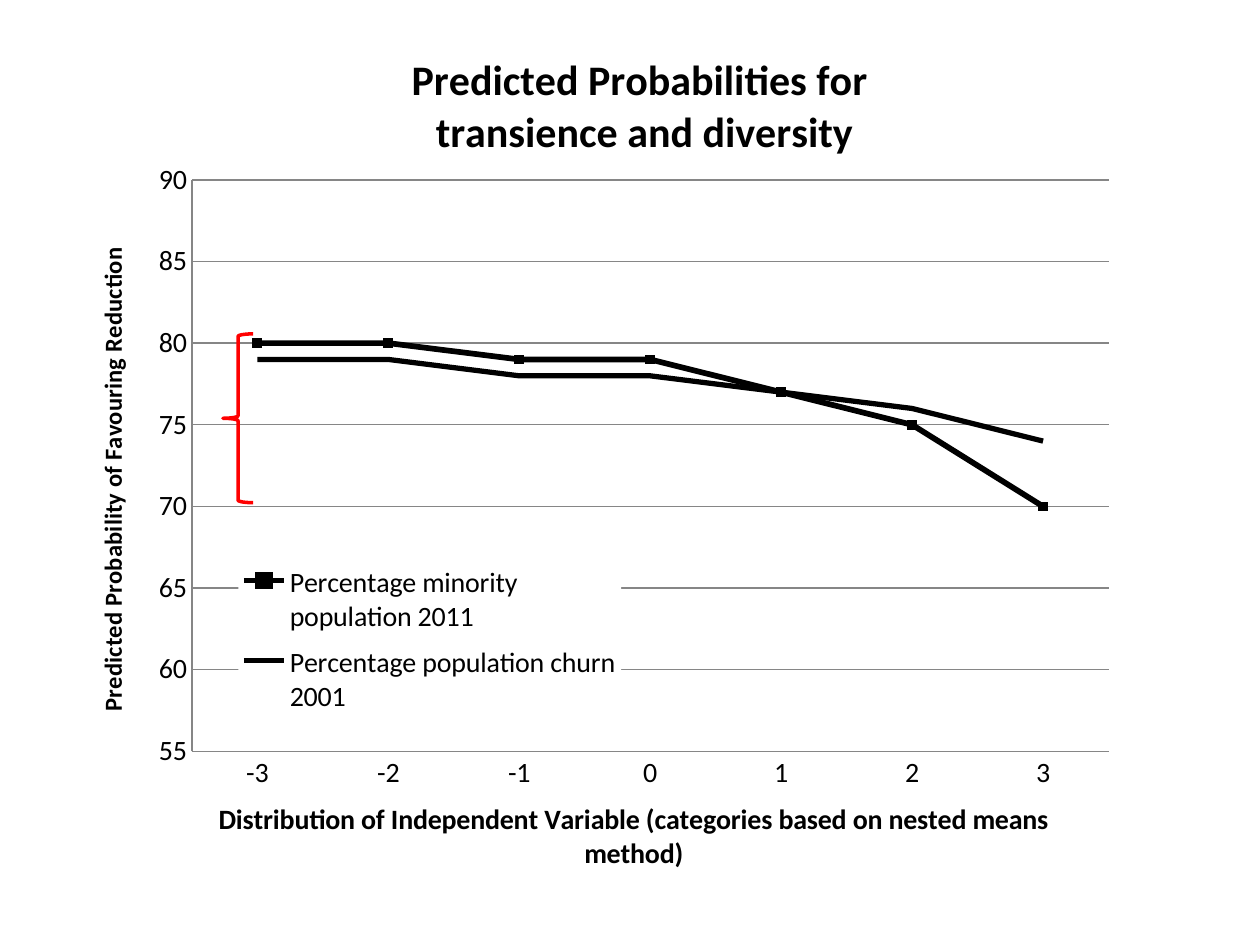
"""Build a slide with a line chart of predicted probabilities and a red brace."""
from lxml import etree
from pptx import Presentation
from pptx.chart.data import CategoryChartData
from pptx.dml.color import RGBColor
from pptx.enum.chart import XL_CHART_TYPE as ChartType, XL_LEGEND_POSITION as LegendPosition
from pptx.enum.chart import XL_MARKER_STYLE as Marker, XL_TICK_MARK as Tick
from pptx.enum.shapes import MSO_SHAPE as Shape
from pptx.oxml import parse_xml
from pptx.oxml.ns import nsdecls, qn
from pptx.util import Inches, Pt


def color(value):
    return RGBColor.from_string(value)


def manual_layout(inner, **bounds):
    layout = etree.Element(qn("c:layout"))
    manual = etree.SubElement(layout, qn("c:manualLayout"))
    values = {"layoutTarget": "inner"} if inner else {}
    values.update(xMode="edge", yMode="edge", **bounds)
    for name, value in values.items():
        etree.SubElement(manual, qn(f"c:{name}")).set("val", str(value))
    return layout


deck = Presentation()
deck.slide_width, deck.slide_height = Inches(10), Inches(7.5)
slide = deck.slides.add_slide(deck.slide_layouts[6])

data = CategoryChartData(number_format="0")
data.categories = ["-3", "-2", "-1", "0", "1", "2", "3"]
data.add_series("Percentage minority population 2011", [80, 80, 79, 79, 77, 75, 70])
data.add_series("Percentage population churn 2001", [79, 79, 78, 78, 77, 76, 74])
chart = slide.shapes.add_chart(
    ChartType.LINE_MARKERS, Inches(0.51), Inches(0.21), Inches(9.21), Inches(6.77), data
).chart
chart.font.name = "Calibri"
chart.font.size = Pt(10)
chart.font.color.rgb = color("000000")
chart.plots[0].vary_by_categories = False

category_axis, value_axis = chart.category_axis, chart.value_axis
value_axis.minimum_scale, value_axis.maximum_scale = 55, 90
value_axis.major_unit = 5
value_axis.has_major_gridlines = True
titles = [
    (chart, "Predicted Probabilities for \ntransience and diversity", 24),
    (category_axis, "Distribution of Independent Variable (categories based on nested means method)", 16),
    (value_axis, "Predicted Probability of Favouring Reduction ", 14),
]
for owner, text, size in titles:
    owner.has_title = True
    title = chart.chart_title if owner is chart else owner.axis_title
    title.text_frame.text = text
    for para in title.text_frame.paragraphs:
        for span in para.runs:
            font = {"name": "Calibri", "size": Pt(size), "bold": True}
            for name, value in font.items():
                setattr(span.font, name, value)
            span.font.color.rgb = color("000000")

for axis in (category_axis, value_axis):
    axis.major_tick_mark = axis.minor_tick_mark = Tick.NONE
    axis.tick_labels.font.size = Pt(16)
for line in (category_axis.format.line, value_axis.format.line, value_axis.major_gridlines.format.line):
    line.color.rgb = color("868686")
    line.width = Pt(0.75)

for series, width, marker in zip(chart.series, (3.25, 3), (Marker.SQUARE, Marker.NONE)):
    series.smooth = False
    series.format.line.color.rgb = color("000000")
    series.format.line.width = Pt(width)
    series.marker.style = marker
    if marker == Marker.SQUARE:
        series.marker.size = 5
        series.marker.format.fill.solid()
        series.marker.format.fill.fore_color.rgb = color("000000")
        series.marker.format.line.color.rgb = color("000000")

chart.has_legend = True
legend = chart.legend
legend.position = LegendPosition.RIGHT
legend.include_in_layout = False
legend.font.size = Pt(16)
legend_xml = chart.element.find(".//" + qn("c:legend"))
legend_fill = parse_xml(
    f'<c:spPr {nsdecls("c", "a")}><a:solidFill><a:srgbClr val="FFFFFF"/></a:solidFill></c:spPr>'
)
legend_xml.find(qn("c:txPr")).addprevious(legend_fill)

plot_xml = chart.element.find(".//" + qn("c:plotArea"))
for area in (plot_xml, legend_xml):
    for layout in area.findall(qn("c:layout")):
        area.remove(layout)
plot_xml.insert(0, manual_layout(True, x=0.11, y=0.18, w=0.79, h=0.67))
legend_xml.find(qn("c:legendPos")).addnext(manual_layout(False, x=0.15, y=0.62, w=0.33, h=0.2))

brace = slide.shapes.add_shape(
    Shape.RIGHT_BRACE, Inches(1.77), Inches(2.65), Inches(0.24), Inches(1.34)
)
brace.element.spPr.find(qn("a:xfrm")).set("flipH", "1")
brace.shadow.inherit = False
brace.fill.background()
brace.line.color.rgb = color("FF0000")
brace.line.width = Pt(2)

deck.save("out.pptx")
